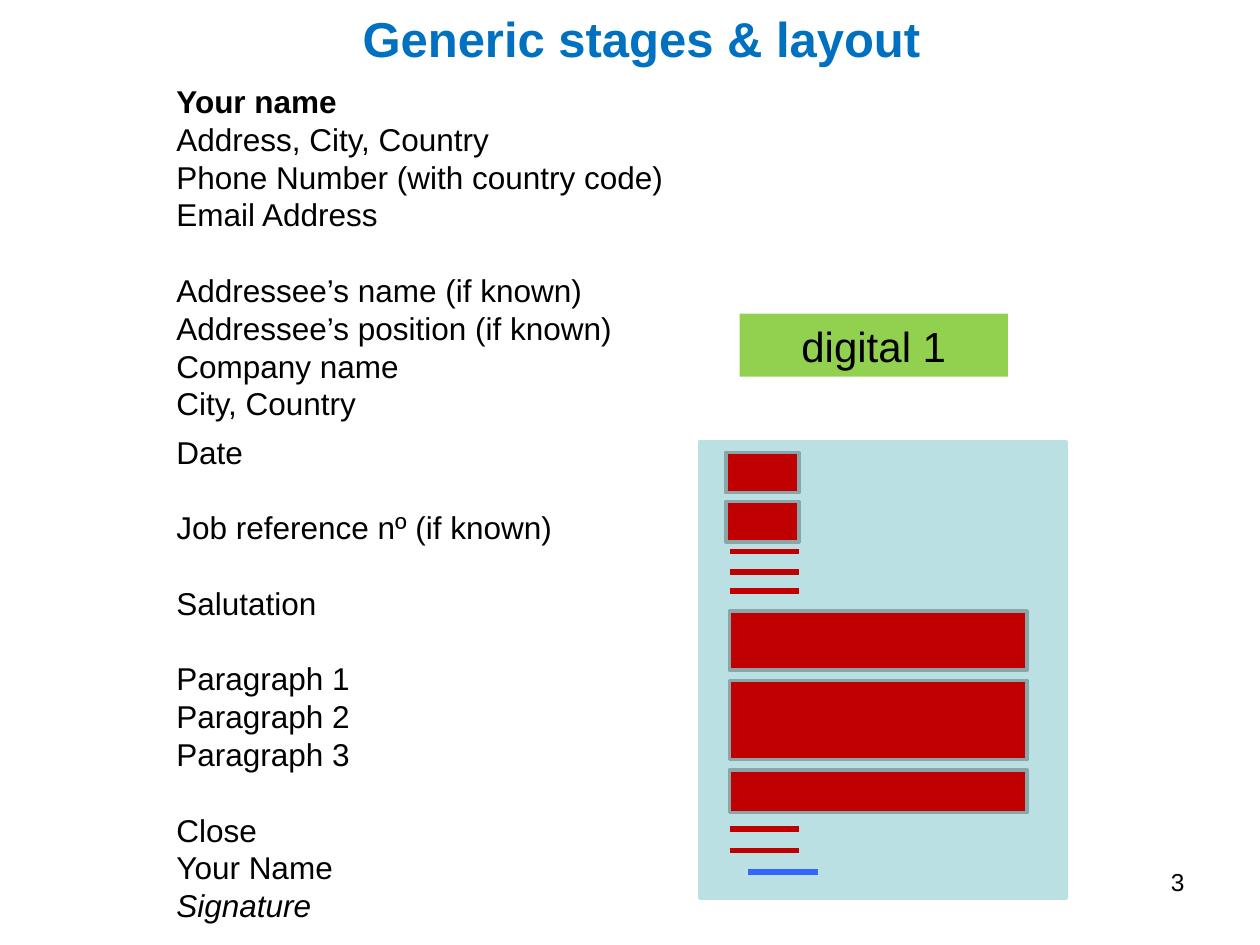
"""Build the slide on the generic stages and layout of a letter."""
from dataclasses import dataclass
from typing import Any, NamedTuple

from lxml import etree
from pptx import Presentation
from pptx.dml.color import RGBColor
from pptx.enum import shapes, text
from pptx.oxml import ns
from pptx.util import Inches, Pt


@dataclass(frozen=True)
class Theme:
    """Colours, font and type sizes."""
    font: str = "Arial"
    ink: str = "000000"
    head: str = "0070C0"
    tag: str = "92D050"
    page: str = "BBE0E3"
    block: str = "C00000"
    edge: str = "8AA6A8"
    sign: str = "3366FF"
    title: float = 28
    label: float = 24
    body: float = 18
    small: float = 14
    pitch: float = 21.6


class Box(NamedTuple):
    """Left, top, width and height in inches."""
    left: float
    top: float
    width: float
    height: float


class Rule(NamedTuple):
    """A short line of the sketched letter."""
    left: float
    top: float
    color: str


class Line(NamedTuple):
    """A paragraph with the space before it and its style."""
    words: str
    gap: float = 0
    bold: bool = False
    italic: bool = False


T = Theme()
GAP = T.pitch
SPAN = 0.55
LINES = [
    Line("Your name", bold=True),
    Line("Address, City, Country\vPhone Number (with country code)\vEmail Address"),
    Line("Addressee’s name (if known)", GAP),
    Line("Addressee’s position (if known)"),
    Line("Company name"),
    Line("City, Country"),
    Line("Date", 6),
    Line("Job reference nº (if known)", GAP),
    Line("Salutation", GAP),
    Line("Paragraph 1", GAP),
    Line("Paragraph 2"),
    Line("Paragraph 3"),
    Line("Close", GAP),
    Line("Your Name"),
    Line("Signature", italic=True),
]
PAGE = Box(5.55, 3.51, 2.91, 3.62)
BLOCKS = [Box(5.76, top, 0.58, 0.32) for top in (3.59, 3.98)] + [
    Box(5.79, top, 2.36, high) for top, high in ((4.85, 0.47), (5.4, 0.63), (6.11, 0.34))
]
RULES = [Rule(5.79, top, T.block) for top in (4.38, 4.54, 4.69, 6.58, 6.75)]
RULES.append(Rule(5.94, 6.92, T.sign))


def apply(item: Any, values: dict[str, Any]) -> None:
    """Set each named attribute of an item."""
    for name, value in values.items():
        setattr(item, name, value)


def place(shape: Any, box: Box) -> None:
    """Move and size a shape."""
    apply(shape, {name: Inches(value) for name, value in box._asdict().items()})


def style(para: Any, size: float, color: str = T.ink, **more: Any) -> None:
    """Format every run of a paragraph."""
    for run in para.runs:
        apply(run.font, {"name": T.font, "size": Pt(size), **more})
        run.font.color.rgb = RGBColor.from_string(color)


def write(shape: Any, words: str, size: float, align: Any, color: str = T.ink, **more: Any) -> None:
    """Put one formatted paragraph in a shape."""
    shape.text_frame.word_wrap = True
    para = shape.text_frame.paragraphs[0]
    apply(para, {"text": words, "alignment": align})
    style(para, size, color, **more)


def fill(shape: Any, lines: list[Line]) -> None:
    """Put the plain list in the body placeholder."""
    frame = shape.text_frame
    apply(frame, {"auto_size": text.MSO_AUTO_SIZE.NONE, "vertical_anchor": text.MSO_ANCHOR.TOP})
    for num, line in enumerate(lines):
        para = frame.add_paragraph() if num else frame.paragraphs[0]
        apply(para, {"text": line.words, "line_spacing": Pt(T.pitch),
                     "space_before": Pt(line.gap), "space_after": Pt(0)})
        style(para, T.body, bold=line.bold, italic=line.italic)
        props = para._p.get_or_add_pPr()
        props.set("marL", "0")
        props.set("indent", "0")
        etree.SubElement(props, ns.qn("a:buNone"))


def block(host: Any, box: Box, color: str, edge: str | None = None) -> Any:
    """Draw a filled rectangle, with an outline if one is named."""
    shape = host.add_shape(shapes.MSO_SHAPE.RECTANGLE, *map(Inches, box))
    shape.shadow.inherit = False
    shape.fill.solid()
    shape.fill.fore_color.rgb = RGBColor.from_string(color)
    if edge:
        shape.line.color.rgb = RGBColor.from_string(edge)
        shape.line.width = Pt(2)
    else:
        shape.line.fill.background()
    return shape


def stroke(host: Any, rule: Rule) -> None:
    """Draw a short horizontal line."""
    ends = (rule.left, rule.top, rule.left + SPAN, rule.top)
    line = host.add_connector(shapes.MSO_CONNECTOR.STRAIGHT, *map(Inches, ends))
    line.line.color.rgb = RGBColor.from_string(rule.color)
    line.line.width = Pt(3)
    etree.SubElement(line._element.spPr, ns.qn("a:effectLst"))


def main() -> None:
    """Build and save the slide."""
    deck = Presentation()
    apply(deck, {"slide_width": Inches(10), "slide_height": Inches(7.5)})
    slide = deck.slides.add_slide(deck.slide_layouts[1])
    title, body = slide.placeholders
    place(title, Box(0.59, 0.03, 9, 0.54))
    title.text_frame.vertical_anchor = text.MSO_ANCHOR.MIDDLE
    write(title, "Generic stages & layout", T.title, text.PP_ALIGN.CENTER, T.head, bold=True)
    place(body, Box(1.3, 0.6, 4.17, 6.69))
    fill(body, LINES)

    number = slide.shapes.add_textbox(*map(Inches, Box(7.17, 6.83, 2.33, 0.52)))
    write(number, "3", T.small, text.PP_ALIGN.RIGHT)
    tag = block(slide.shapes, Box(5.87, 2.49, 2.13, 0.5), T.tag)
    write(tag, "digital 1", T.label, text.PP_ALIGN.CENTER)

    letter = slide.shapes.add_group_shape().shapes
    block(letter, PAGE, T.page, T.page)
    for box in BLOCKS:
        block(letter, box, T.block, T.edge)
    for rule in RULES:
        stroke(letter, rule)
    deck.save("out.pptx")


if __name__ == "__main__":
    main()
